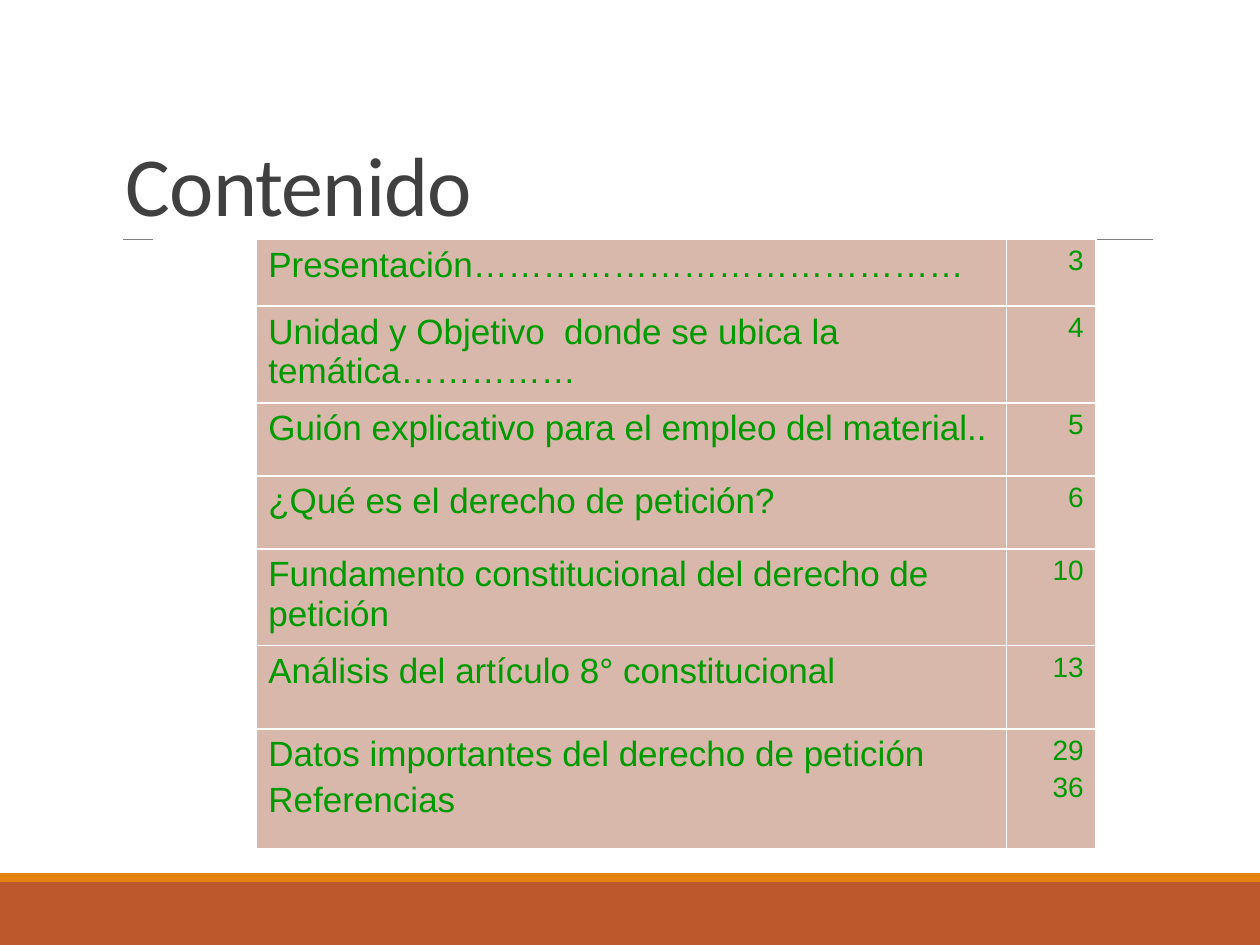
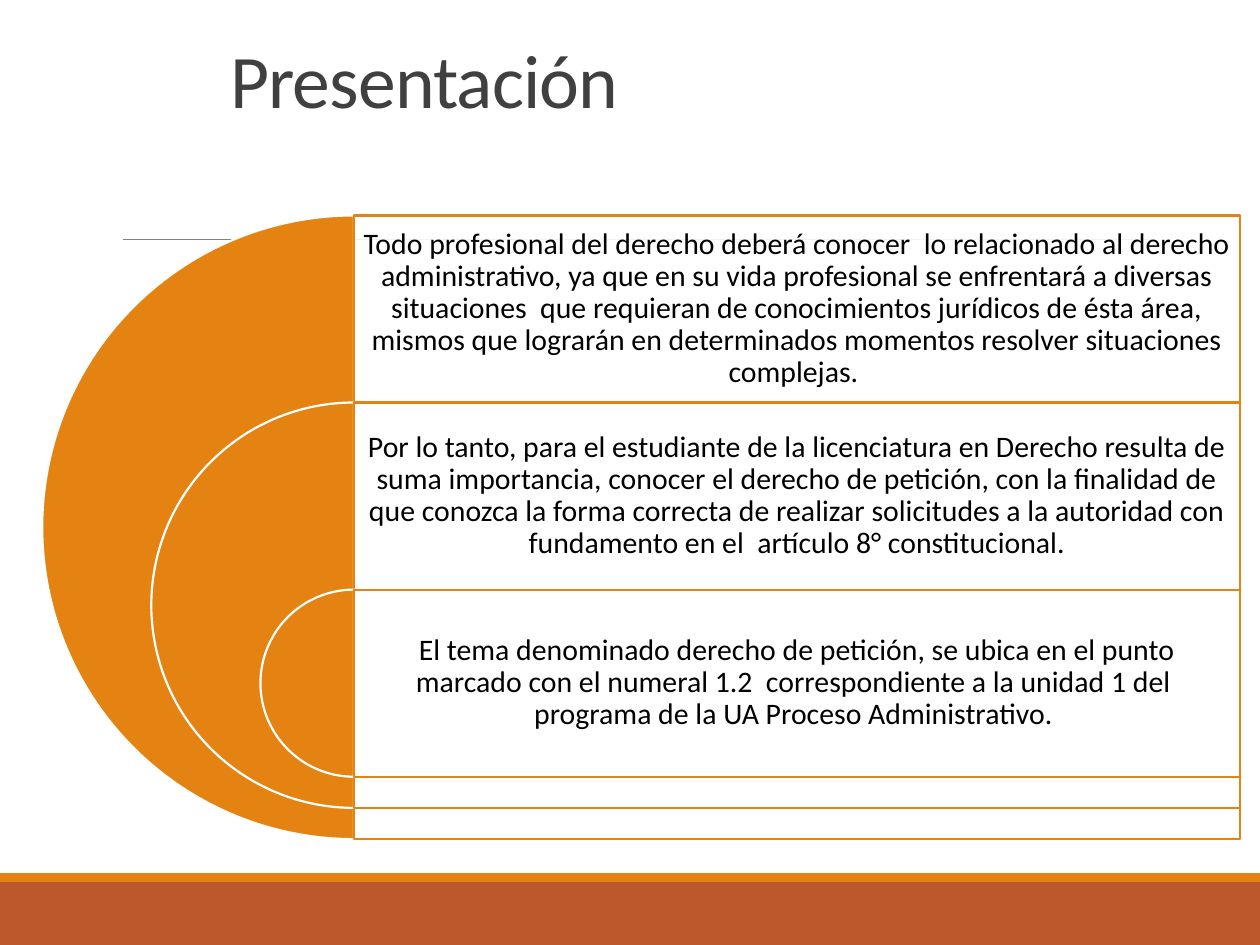
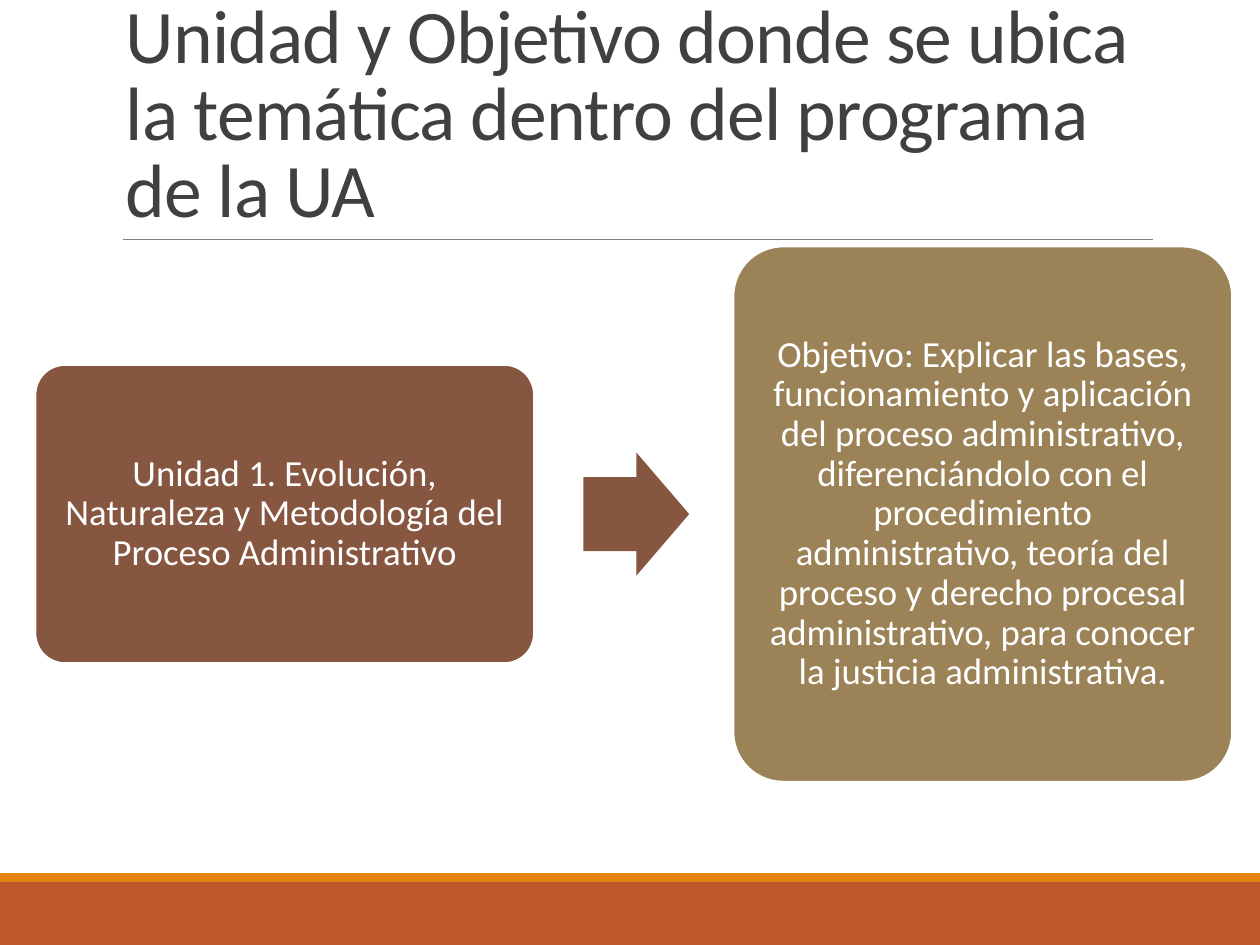
from lxml import etree
from pptx import Presentation
from pptx.dml.color import RGBColor
from pptx.enum.shapes import MSO_CONNECTOR, MSO_SHAPE
from pptx.enum.text import MSO_ANCHOR, PP_ALIGN
from pptx.oxml.ns import qn
from pptx.util import Inches, Pt

RECT, PIE = MSO_SHAPE.RECTANGLE, MSO_SHAPE.PIE
ROUNDED, ARROW = MSO_SHAPE.ROUNDED_RECTANGLE, MSO_SHAPE.RIGHT_ARROW
LEFT, CENTER, RIGHT = PP_ALIGN.LEFT, PP_ALIGN.CENTER, PP_ALIGN.RIGHT
TOP, MIDDLE, BOTTOM = MSO_ANCHOR.TOP, MSO_ANCHOR.MIDDLE, MSO_ANCHOR.BOTTOM

SLIDE_W, SLIDE_H = 10, 7.5
COLORS = {
    "white": "FFFFFF", "black": "000000", "title": "404040", "rule": "808080",
    "rust": "BD582C", "orange": "E48312", "brown": "865640", "olive": "9B8357",
    "green": "009900", "cell": "D7B8AB",
}
TITLE_BOX = (0.9, 0.31, 8.25, 1.59)

CONTENTS_TITLE = "Contenido"
CONTENTS = [  # row height, topics, pages
    (0.53, ["Presentación……………………………………"], ["3"]),
    (0.58, ["Unidad y Objetivo  donde se ubica la temática……………"], ["4"]),
    (0.58, ["Guión explicativo para el empleo del material.."], ["5"]),
    (0.58, ["¿Qué es el derecho de petición?"], ["6"]),
    (0.58, ["Fundamento constitucional del derecho de petición"], ["10"]),
    (0.66, ["Análisis del artículo 8° constitucional"], ["13"]),
    (0.95, ["Datos importantes del derecho de petición", "Referencias"], ["29", "36"]),
]
CONTENTS_COLUMNS = (0.81, 5.96, 0.71)

INTRO_TITLE = "Presentación"
INTRO = [
    "Todo profesional del derecho deberá conocer  lo relacionado al derecho "
    "administrativo, ya que en su vida profesional se enfrentará a diversas "
    "situaciones  que requieran de conocimientos jurídicos de ésta área, mismos "
    "que lograrán en determinados momentos resolver situaciones complejas. ",
    "Por lo tanto, para el estudiante de la licenciatura en Derecho resulta de "
    "suma importancia, conocer el derecho de petición, con la finalidad de que "
    "conozca la forma correcta de realizar solicitudes a la autoridad con "
    "fundamento en el  artículo 8° constitucional.",
    "El tema denominado derecho de petición, se ubica en el punto marcado con el "
    "numeral 1.2  correspondiente a la unidad 1 del  programa de la UA Proceso "
    "Administrativo. ",
]

UNIT_TITLE = "Unidad y Objetivo donde se ubica la temática dentro del programa de la UA"
UNIT_STEPS = [  # text, height, colour
    ("Unidad 1. Evolución, Naturaleza y Metodología del Proceso Administrativo",
     2.37, "brown"),
    ("Objetivo: Explicar las bases, funcionamiento y aplicación del proceso "
     "administrativo, diferenciándolo con el procedimiento administrativo, teoría "
     "del proceso y derecho procesal administrativo, para conocer la justicia "
     "administrativa.", 4.25, "olive"),
]


def rgb(name):
    return RGBColor.from_string(COLORS[name])


def write(frame, paragraphs, size, color, font="Calibri", align=LEFT, anchor=TOP,
          inset=None, line_spacing=None, before=0, tracking=None):
    """Fill a text frame; before is a share of the font size, tracking is in points."""
    frame.word_wrap = True
    frame.vertical_anchor = anchor
    if inset is not None:
        frame.margin_left = frame.margin_right = Inches(inset)
        frame.margin_top = frame.margin_bottom = Inches(inset)
    for i, text in enumerate(paragraphs):
        paragraph = frame.add_paragraph() if i else frame.paragraphs[0]
        paragraph.alignment = align
        paragraph.space_before = Pt(before * size)
        if line_spacing:
            paragraph.line_spacing = line_spacing
        run = paragraph.add_run()
        run.text = text
        run.font.name, run.font.size = font, Pt(size)
        run.font.color.rgb = rgb(color)
        if tracking:
            run.font._element.set("spc", str(round(tracking * 100)))


def add_textbox(slide, box, text, **style):
    frame = slide.shapes.add_textbox(*map(Inches, box)).text_frame
    write(frame, [text], **style)


def add_block(slide, kind, box, fill, line=None, adjust=(), opacity=None):
    block = slide.shapes.add_shape(kind, *map(Inches, box))
    block.shadow.inherit = False
    for i, value in enumerate(adjust):
        block.adjustments[i] = value
    block.fill.solid()
    block.fill.fore_color.rgb = rgb(fill)
    if opacity:
        color = block._element.spPr.find(qn("a:solidFill"))[0]
        etree.SubElement(color, qn("a:alpha")).set("val", str(opacity * 1000))
    if line:
        block.line.color.rgb = rgb(line)
        block.line.width = Pt(1.25)
    else:
        block.line.fill.background()
    return block


def add_base_slide(deck, title, size=43.2, title_box=TITLE_BOX):
    """Add a slide with the footer bands, the rule and the title."""
    slide = deck.slides.add_slide(deck.slide_layouts[6])
    add_block(slide, RECT, (0, 7, SLIDE_W, 0.5), "rust")
    add_block(slide, RECT, (0, 6.93, SLIDE_W, 0.07), "orange")
    rule = slide.shapes.add_connector(
        MSO_CONNECTOR.STRAIGHT, *map(Inches, (0.98, 1.9, 9.15, 1.9)))
    rule.line.color.rgb = rgb("rule")
    rule.line.width = Pt(0.5)
    etree.SubElement(rule._element.spPr, qn("a:effectLst"))
    add_textbox(slide, title_box, title, size=size, color="title", anchor=BOTTOM,
                line_spacing=0.85, tracking=-0.5)
    return slide


def build_contents(deck):
    slide = add_base_slide(deck, CONTENTS_TITLE, size=48)
    heights = [row[0] for row in CONTENTS]
    box = (1.22, 1.9, sum(CONTENTS_COLUMNS), sum(heights))
    table = slide.shapes.add_table(
        len(CONTENTS), len(CONTENTS_COLUMNS), *map(Inches, box)).table
    table.first_row = table.horz_banding = False
    for column, width in zip(table.columns, CONTENTS_COLUMNS):
        column.width = Inches(width)
    for row, (height, topics, pages) in zip(table.rows, CONTENTS):
        row.height = Inches(height)
        margin, topic_cell, page_cell = row.cells
        margin.fill.background()
        for cell, lines, size, align in ((topic_cell, topics, 20, LEFT),
                                         (page_cell, pages, 16, RIGHT)):
            cell.fill.solid()
            cell.fill.fore_color.rgb = rgb("cell")
            write(cell.text_frame, lines, size, "green", font="Arial",
                  align=align, before=0.2)


def build_intro(deck):
    slide = add_base_slide(deck, INTRO_TITLE, title_box=(1.73, 0.36, 8.25, 0.67))
    axis, top, panel_w, outer = 2.81, 1.71, 7.03, 4.95
    step = outer * 0.3
    shrink = outer * 0.35
    for i, text in enumerate(INTRO):
        diameter = outer - i * shrink
        y = top + i * step
        add_block(slide, PIE, (axis - diameter / 2, y, diameter, diameter), "orange",
                  line="white", adjust=(54, 162))
        add_block(slide, RECT, (axis, y, panel_w, diameter), "white",
                  line="orange", opacity=90)
        add_textbox(slide, (axis, y, panel_w, step), text, size=17, color="black",
                    align=CENTER, anchor=MIDDLE, inset=0.07, line_spacing=0.9)


def build_unit(deck):
    slide = add_base_slide(deck, UNIT_TITLE)
    left, middle, step_w, pitch = 0.28, 4.08, 3.96, 5.54
    arrow_w, arrow_h = 0.84, 0.98
    for i, (text, height, color) in enumerate(UNIT_STEPS):
        box = (left + i * pitch, middle - height / 2, step_w, height)
        step = add_block(slide, ROUNDED, box, color, line="white", adjust=(0.1,))
        write(step.text_frame, [text], 21, "white", align=CENTER, anchor=MIDDLE,
              inset=0.09, line_spacing=0.9)
    arrow_x = left + step_w + 0.39
    add_block(slide, ARROW, (arrow_x, middle - arrow_h / 2, arrow_w, arrow_h),
              "brown", adjust=(0.6, 0.5))


def main():
    deck = Presentation()
    deck.slide_width, deck.slide_height = Inches(SLIDE_W), Inches(SLIDE_H)
    build_contents(deck)
    build_intro(deck)
    build_unit(deck)
    deck.save("out.pptx")


if __name__ == "__main__":
    main()
